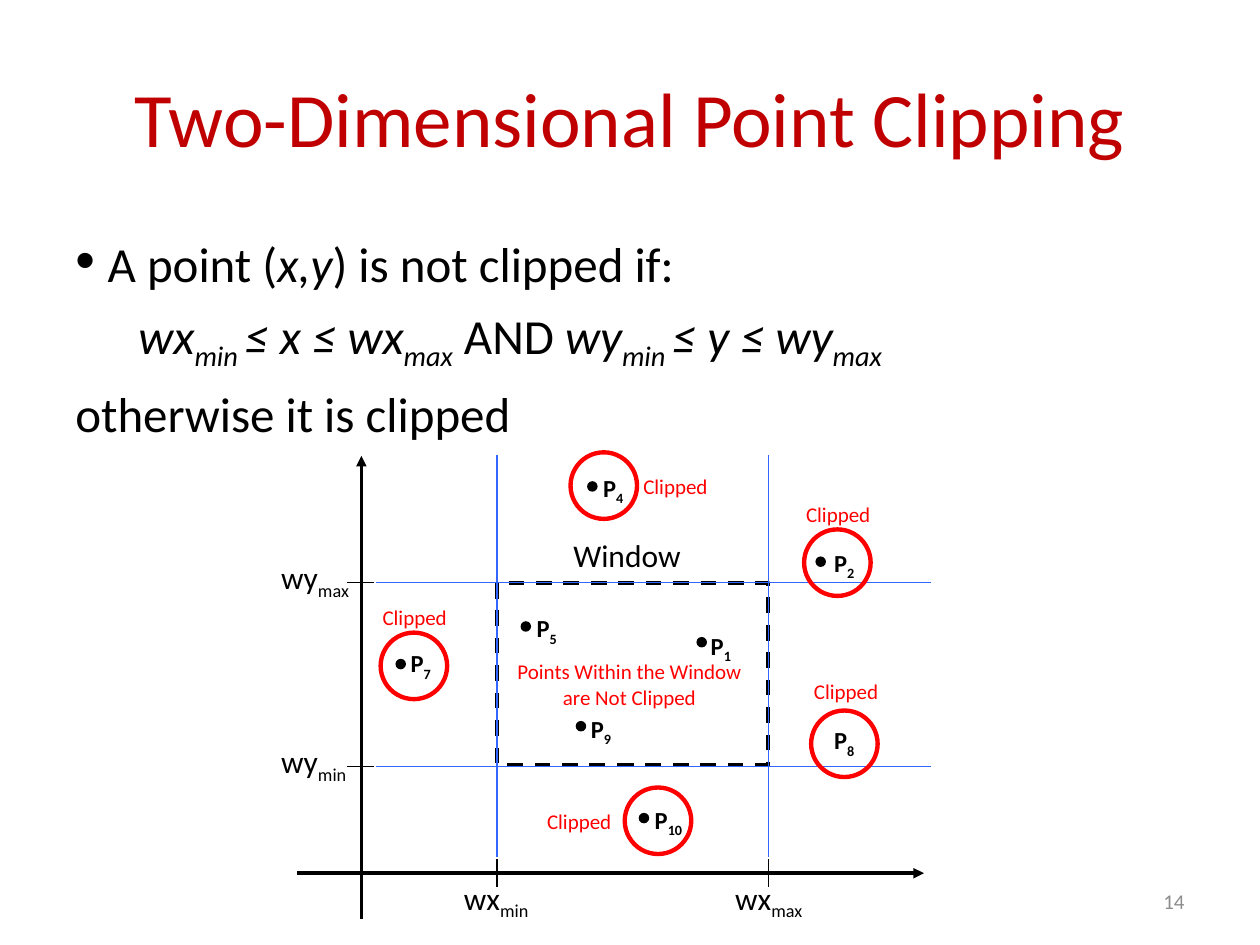
"""Build a slide that explains point clipping against a window."""
from dataclasses import dataclass

from lxml import etree
from pptx import Presentation
from pptx.dml.color import RGBColor
from pptx.enum.dml import MSO_LINE
from pptx.enum.shapes import MSO_CONNECTOR, MSO_SHAPE
from pptx.enum.text import MSO_ANCHOR, MSO_AUTO_SIZE, PP_ALIGN
from pptx.oxml.ns import qn
from pptx.util import Pt

LEFT, MID, RIGHT = PP_ALIGN.LEFT, PP_ALIGN.CENTER, PP_ALIGN.RIGHT
TOP, CENTRE = MSO_ANCHOR.TOP, MSO_ANCHOR.MIDDLE
GROW, FIXED = MSO_AUTO_SIZE.SHAPE_TO_FIT_TEXT, MSO_AUTO_SIZE.NONE
OVAL, RECT = MSO_SHAPE.OVAL, MSO_SHAPE.RECTANGLE
STRAIGHT, DASH = MSO_CONNECTOR.STRAIGHT, MSO_LINE.DASH


@dataclass(frozen=True)
class Theme:
    """Hold the colours and type sizes of the slide."""
    font: str = "Calibri"
    head: RGBColor = RGBColor(0xC0, 0, 0)
    ink: RGBColor = RGBColor(0, 0, 0)
    alert: RGBColor = RGBColor(0xFF, 0, 0)
    guide: RGBColor = RGBColor(0x33, 0x66, 0xFF)
    grey: RGBColor = RGBColor(0x8C, 0x8C, 0x8C)
    title: int = 44
    lead: int = 32
    body: int = 28
    axis: int = 18
    point: int = 14
    note: int = 12


THEME = Theme()
DOT, RING = 6, 38
X_MIN, X_MAX, Y_MAX, Y_MIN = 284, 439, 333, 438

POINTS = [
    ("1", (398, 364), (399, 357), None, None),
    ("2", (466, 318), (469.5, 309.5), (459.5, 302.5), (453.5, 283)),
    ("4", (335.5, 275), (337.5, 266.5), (326, 258.5), (360.5, 267)),
    ("5", (297.5, 355), (299.5, 347), None, None),
    ("7", (226, 376.5), (227.5, 367), (217.5, 361.5), (211.5, 342)),
    ("8", None, (469.5, 411), (463.5, 406), (458, 384.5)),
    ("9", (329, 412), (330.5, 404.5), None, None),
    ("10", (365, 464.5), (367, 456.5), (357, 450), (305.5, 458.5)),
]

BODY = [
    [("A point (", ""), ("x,y", "i"), (") is not clipped if:", "")],
    [("\twx", "i"), ("min ", "is"), ("≤ x ≤ wx", "i"), ("max", "is"),
     (" AND ", ""), ("wy", "i"), ("min ", "is"), ("≤ y ≤ wy", "i"),
     ("max", "is")],
    [("otherwise it is clipped", "")],
]


def put(item, values):
    """Set each named attribute of an item."""
    for name, value in values.items():
        setattr(item, name, value)


def write(para, runs, size, color=THEME.ink):
    """Add runs whose marks are b for bold, i for italic, s for subscript."""
    for words, marks in runs:
        run = para.add_run()
        run.text = words
        put(run.font, {"name": THEME.font, "size": Pt(size),
                       "bold": "b" in marks, "italic": "i" in marks})
        run.font.color.rgb = color
        if "s" in marks:
            run._r.get_or_add_rPr().set("baseline", "-25000")


def add_text(slide, box, runs, size, color=THEME.ink, align=LEFT,
             wrap=False, anchor=TOP, fit=GROW):
    """Add a text box and return its frame."""
    frame = slide.shapes.add_textbox(*map(Pt, box)).text_frame
    put(frame, {"word_wrap": wrap, "auto_size": fit,
                "vertical_anchor": anchor})
    frame.paragraphs[0].alignment = align
    write(frame.paragraphs[0], runs, size, color)
    return frame


def add_form(slide, kind, box, fill=None, line=None, width=0, dash=None):
    """Add a preset shape with a plain fill or outline."""
    form = slide.shapes.add_shape(kind, *map(Pt, box))
    form.shadow.inherit = False
    if fill is None:
        form.fill.background()
    else:
        form.fill.solid()
        form.fill.fore_color.rgb = fill
    if line is None:
        form.line.fill.background()
    else:
        form.line.color.rgb = line
        put(form.line, {"width": Pt(width), "dash_style": dash})


def add_line(slide, ends, color=THEME.ink, width=0.75, arrow=False):
    """Add a straight line, with an arrowhead at its end if asked."""
    link = slide.shapes.add_connector(STRAIGHT, *map(Pt, ends))
    link.line.color.rgb = color
    link.line.width = Pt(width)
    if arrow:
        tail = etree.SubElement(link.line._get_or_add_ln(), qn("a:tailEnd"))
        tail.set("type", "triangle")
    etree.SubElement(link._element.spPr, qn("a:effectLst"))


def add_title(slide):
    """Fill and place the title."""
    title = slide.shapes.title
    put(title, {"left": Pt(36), "top": Pt(21.6),
                "width": Pt(648), "height": Pt(90)})
    title.text_frame.vertical_anchor = CENTRE
    para = title.text_frame.paragraphs[0]
    para.alignment = MID
    write(para, [("Two-Dimensional Point Clipping", "")],
          THEME.title, THEME.head)


def add_body(slide):
    """Add the rule for clipping, with a bullet on its first line."""
    frame = add_text(slide, (36, 126, 648, 356.4), [(" ", "")], THEME.lead,
                     wrap=True, fit=FIXED)
    first = frame.paragraphs[0]
    for index, runs in enumerate(BODY):
        para = frame.add_paragraph() if index else first
        para.space_before = Pt(6.5)
        write(para, runs, THEME.body)
    props = first._p.get_or_add_pPr()
    etree.SubElement(props, qn("a:buFont")).set("typeface", "Arial")
    etree.SubElement(props, qn("a:buChar")).set("char", "•")


def add_axes(slide):
    """Draw the axes, ticks, guides, window and axis labels."""
    add_line(slide, (170, 499, 528, 499), width=2, arrow=True)
    add_line(slide, (206.5, 525, 206.5, 260.5), width=2, arrow=True)
    add_form(slide, RECT, (X_MIN, Y_MAX, X_MAX - X_MIN, Y_MIN - Y_MAX - 1),
             line=THEME.ink, width=2.25, dash=DASH)
    for y, name in ((Y_MAX, "max"), (Y_MIN, "min")):
        add_line(slide, (532, y, 215, y), THEME.guide)
        add_line(slide, (214, y, 198, y))
        add_text(slide, (153.5, y - 17.5, 57, 29),
                 [("wy", ""), (name, "s")], THEME.axis)
    for x, name in ((X_MIN, "min"), (X_MAX, "max")):
        add_line(slide, (x, 260, x, 490), THEME.guide)
        add_line(slide, (x, 491, x, 507))
        add_text(slide, (x - 26, 498.5, 57, 29),
                 [("wx", ""), (name, "s")], THEME.axis)
    add_text(slide, (320.5, 302.5, 78.5, 29), [("Window", "")], THEME.axis)
    add_text(slide, (283.5, 373, 152.5, 36),
             [("Points Within the Window are Not Clipped", "")],
             THEME.note, THEME.alert, MID, wrap=True)


def add_point(slide, name, dot, label, ring, note):
    """Draw a point with its label, and a ring and note if it is clipped."""
    if dot:
        add_form(slide, OVAL, (*dot, DOT, DOT), fill=THEME.ink)
    add_text(slide, (*label, 24 + 5 * len(name), 24),
             [("P", "b"), (name, "bs")], THEME.point)
    if ring:
        add_form(slide, OVAL, (*ring, RING, RING), line=THEME.alert, width=2.5)
        add_text(slide, (*note, 54.5, 21.5), [("Clipped", "")],
                 THEME.note, THEME.alert)


def main():
    """Build the slide and save it."""
    deck = Presentation()
    put(deck, {"slide_width": Pt(720), "slide_height": Pt(540)})
    slide = deck.slides.add_slide(deck.slide_layouts[5])
    add_title(slide)
    add_body(slide)
    add_axes(slide)
    for point in POINTS:
        add_point(slide, *point)
    add_text(slide, (516, 500.5, 168, 28.75), [("14", "")], THEME.note,
             THEME.grey, RIGHT, wrap=True, anchor=CENTRE, fit=FIXED)
    deck.save("out.pptx")


if __name__ == "__main__":
    main()
